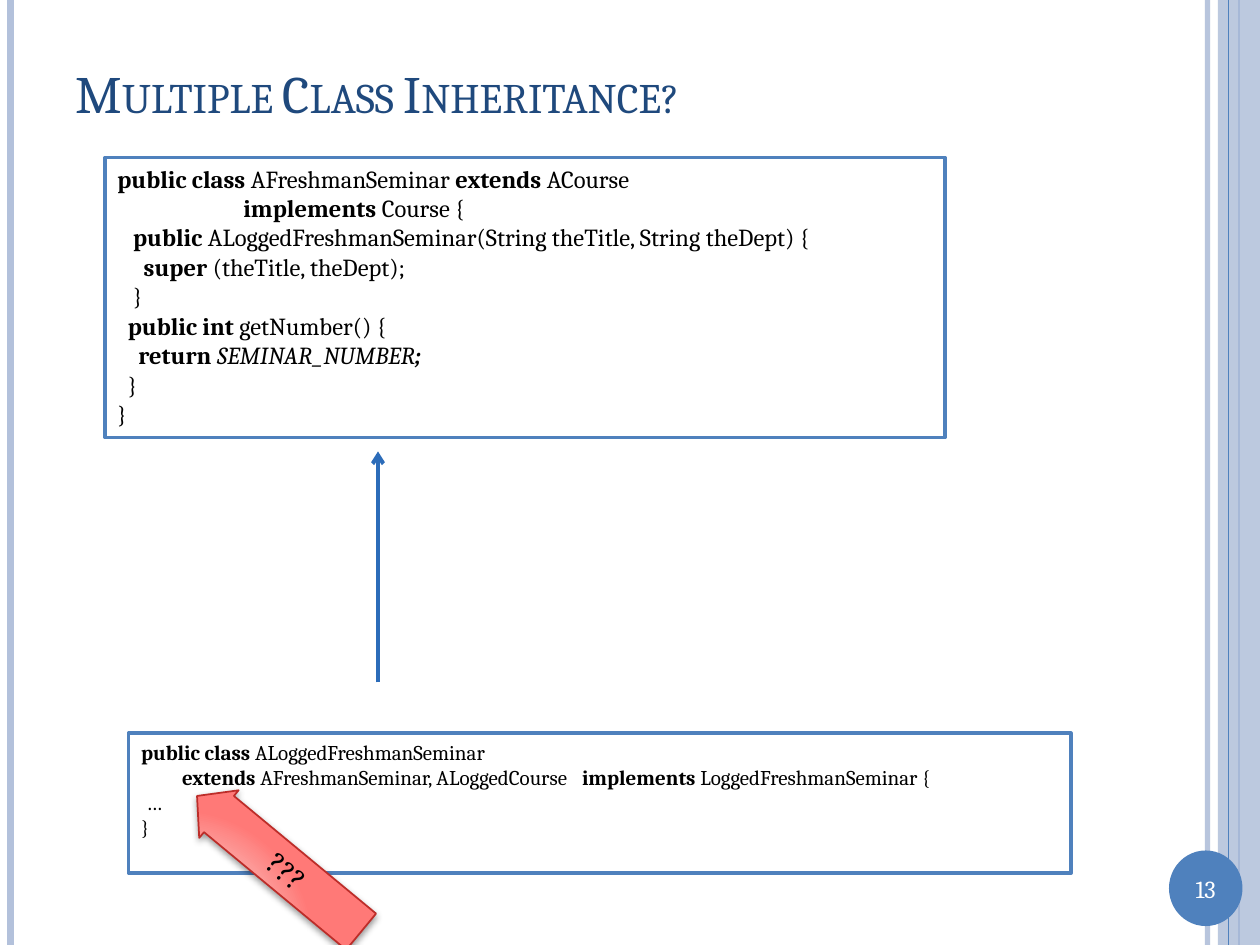
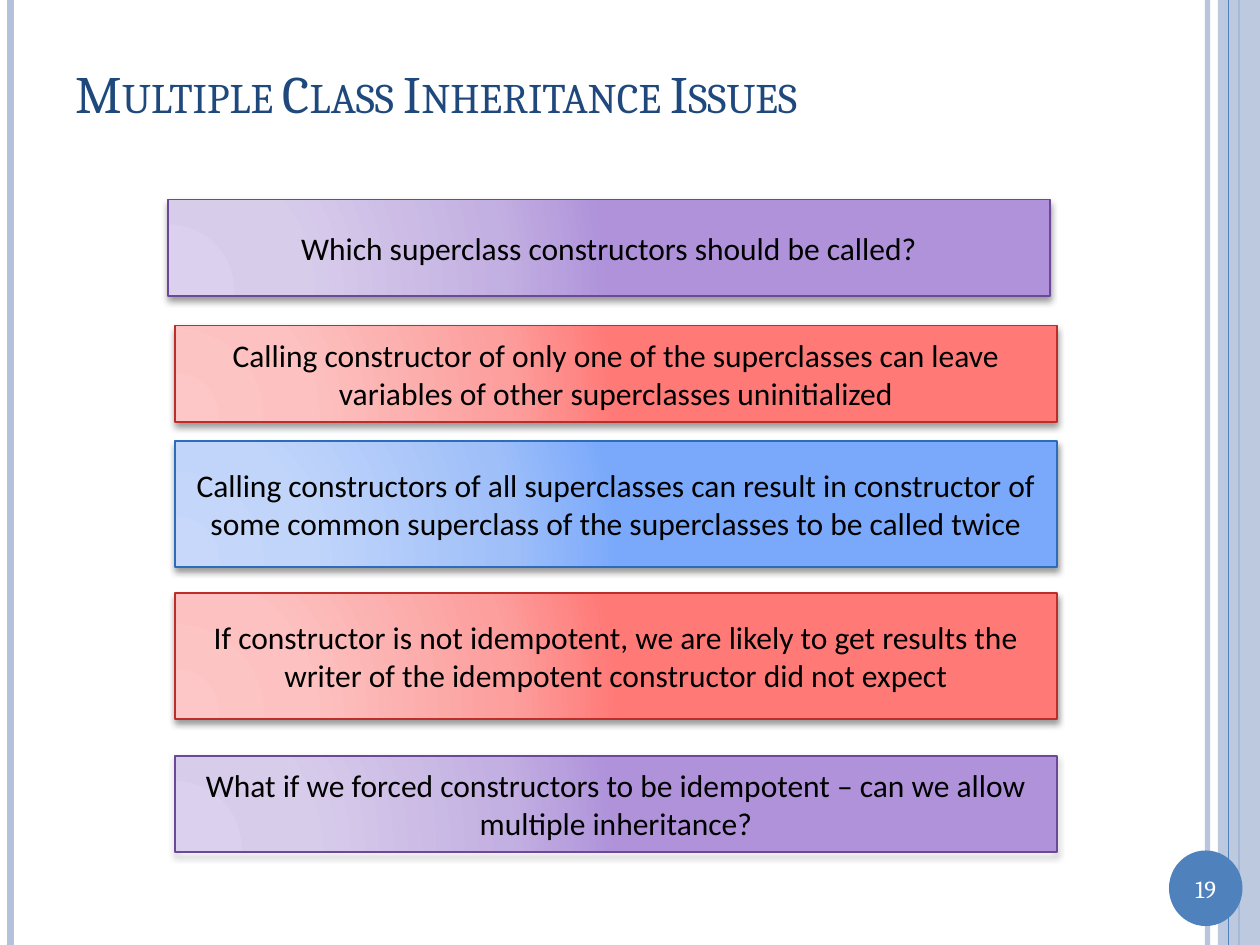
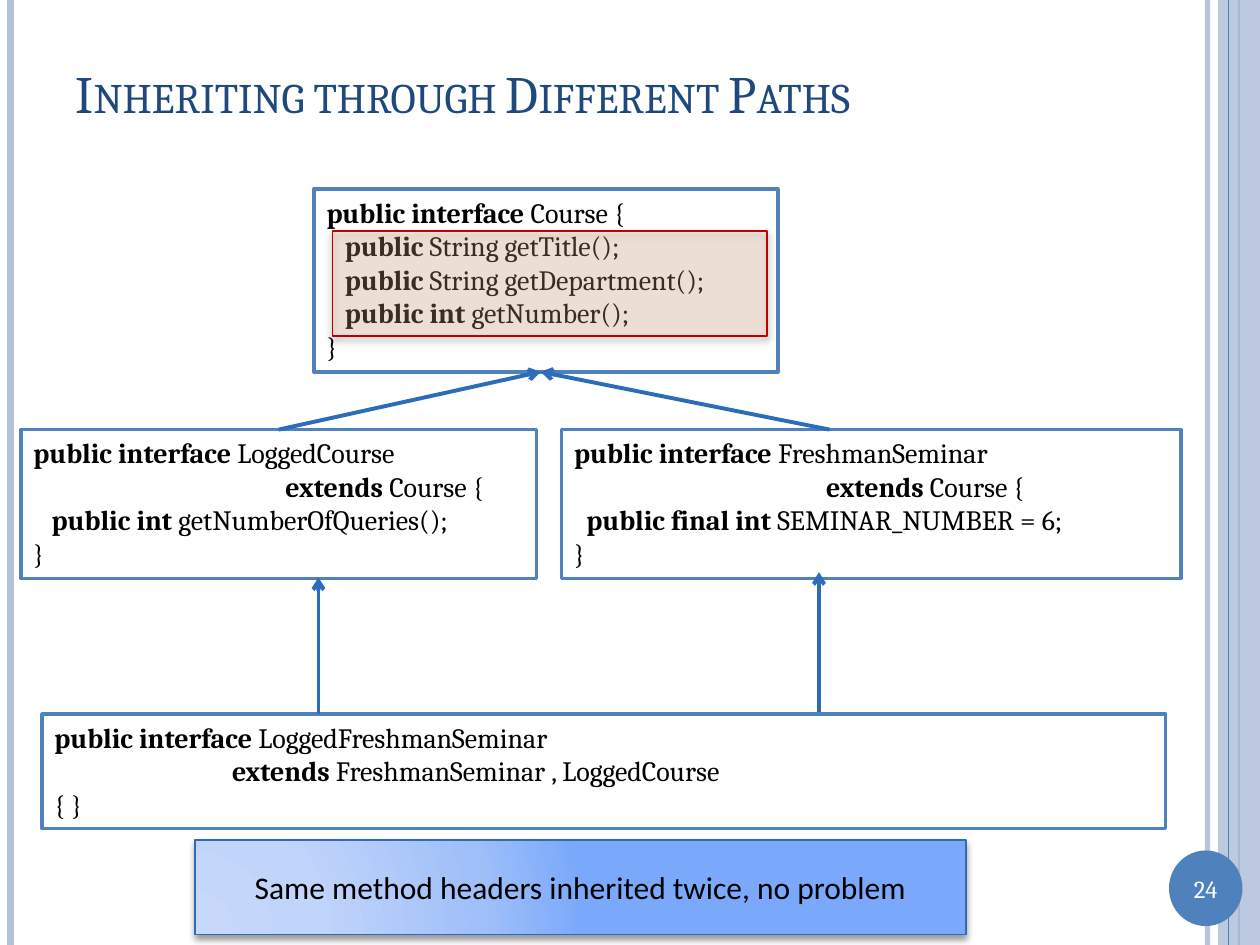
import dataclasses

import lxml.etree
import pptx
import pptx.dml.color
import pptx.enum.shapes
import pptx.enum.text
import pptx.oxml.ns
import pptx.util

Pt = pptx.util.Pt
qn = pptx.oxml.ns.qn
SHAPES = pptx.enum.shapes.MSO_SHAPE
MIDDLE = pptx.enum.text.MSO_ANCHOR.MIDDLE
ALIGN = pptx.enum.text.PP_ALIGN


@dataclasses.dataclass(frozen=True)
class Tone:
    line: str
    stops: tuple


@dataclasses.dataclass(frozen=True)
class Theme:
    serif: str = "Cambria"
    sans: str = "Calibri"
    title: str = "1F497D"
    accent: str = "4F81BD"
    band: str = "B3C1DB"
    arrow: str = "2C6CB9"
    text: str = "000000"
    paper: str = "FFFFFF"
    marker: str = "FAC090"
    marker_line: str = "C00000"
    title_size: int = 30
    panel_size: int = 18
    number_size: int = 14
    code_small: int = 12
    code_medium: int = 14
    code_large: int = 16
    purple: Tone = Tone("6C4898", ("DBD0ED", "D8CCEB", "C3B0E2", "AF92DA"))
    red: Tone = Tone("BD2D29", ("FCC7C6", "FCC1C0", "FC9F9D", "FF7977"))
    blue: Tone = Tone("2C6CB9", ("C7D8FB", "C1D5FA", "9FBFF9", "7AA9FB"))


@dataclasses.dataclass(frozen=True)
class Box:
    left: float
    top: float
    width: float
    height: float

    def inner(self, left, top, width, height):
        return Box(self.left + left, self.top + top, width, height)

    def point(self, x, y):
        return self.left + x, self.top + y

    def lengths(self):
        return [Pt(value) for value in dataclasses.astuple(self)]


THEME = Theme()
PAGE = Box(0, 0, 720, 540)


def rgb(colour):
    return pptx.dml.color.RGBColor.from_string(colour)


def add_element(parent, tag, **attributes):
    element = lxml.etree.SubElement(parent, qn(tag))
    for name, value in attributes.items():
        element.set(name, str(value))
    return element


def set_opacity(fill_owner, percent):
    colour = next(fill_owner.iter(qn("a:srgbClr")))
    add_element(colour, "a:alpha", val=percent * 1000)


def set_font(span, name, size, colour=THEME.text):
    span.font.name = name
    span.font.size = Pt(size)
    span.font.color.rgb = rgb(colour)


def add_box(page, box, fill=None, line=None, weight=1, kind=SHAPES.RECTANGLE):
    shape = page.shapes.add_shape(kind, *box.lengths())
    shape.shadow.inherit = False
    if fill:
        shape.fill.solid()
        shape.fill.fore_color.rgb = rgb(fill)
    if line:
        shape.line.color.rgb = rgb(line)
        shape.line.width = Pt(weight)
    else:
        shape.line.fill.background()
    return shape


def add_line(page, start, end, colour=THEME.arrow, weight=2.25, arrow=True):
    points = [Pt(value) for value in (*start, *end)]
    line = page.shapes.add_connector(pptx.enum.shapes.MSO_CONNECTOR.STRAIGHT, *points)
    line.line.color.rgb = rgb(colour)
    line.line.width = Pt(weight)
    properties = line._element.spPr
    if arrow:
        add_element(properties.find(qn("a:ln")), "a:tailEnd", type="arrow")
    add_element(properties, "a:effectLst")
    return line


def add_shadow(shape):
    effects = shape._element.spPr.find(qn("a:effectLst"))
    shadow = add_element(effects, "a:outerShdw", blurRad=Pt(4), dist=Pt(2),
                         dir=90 * 60000, rotWithShape=0)
    colour = add_element(shadow, "a:srgbClr", val=THEME.text)
    add_element(colour, "a:alpha", val=40000)


def add_gradient(shape, tone):
    shape.fill.gradient()
    gradient = shape._element.spPr.find(qn("a:gradFill"))
    for child in list(gradient):
        gradient.remove(child)
    stops = add_element(gradient, "a:gsLst")
    for position, colour in zip((0, 30, 75, 100), tone.stops):
        stop = add_element(stops, "a:gs", pos=position * 1000)
        add_element(stop, "a:srgbClr", val=colour)
    circle = add_element(gradient, "a:path", path="circle")
    add_element(circle, "a:fillToRect", l=5000, t=100000, r=120000, b=10000)


def set_label(shape, text, font, size, colour=THEME.text, inset=3.6):
    frame = shape.text_frame
    frame.word_wrap = True
    frame.vertical_anchor = MIDDLE
    frame.margin_left = frame.margin_right = Pt(inset)
    frame.margin_top = frame.margin_bottom = Pt(inset)
    frame.text = text
    para = frame.paragraphs[0]
    para.alignment = ALIGN.CENTER
    set_font(para.runs[0], font, size, colour)


def add_panel(page, box, text, tone, kind=SHAPES.RECTANGLE, font=THEME.sans):
    panel = add_box(page, box, line=tone.line, kind=kind)
    add_gradient(panel, tone)
    add_shadow(panel)
    set_label(panel, text, font, THEME.panel_size)
    return panel


def add_code(page, box, size, lines):
    shape = add_box(page, box, THEME.paper, THEME.accent, 2)
    frame = shape.text_frame
    frame.word_wrap = True
    frame.vertical_anchor = pptx.enum.text.MSO_ANCHOR.TOP
    for index, (indent, line) in enumerate(lines):
        para = frame.add_paragraph() if index else frame.paragraphs[0]
        para.alignment = ALIGN.LEFT
        properties = para._p.get_or_add_pPr()
        properties.set("marL", "0")
        properties.set("indent", str(Pt(indent)))
        if "\t" in line:
            tabs = add_element(properties, "a:tabLst")
            add_element(tabs, "a:tab", pos=Pt(252), algn="l")
        for bold, section in enumerate(line.split("*")):
            for italic, piece in enumerate(section.split("~")):
                if piece:
                    span = para.add_run()
                    span.text = piece
                    set_font(span, THEME.serif, size)
                    span.font.bold = bold % 2 == 1
                    span.font.italic = italic % 2 == 1
    return shape


def add_frame(page, area, number):
    def rule(offset, colour, weight):
        return add_line(page, area.point(offset, 0), area.point(offset, area.height),
                        colour, weight, arrow=False)

    set_opacity(rule(690, THEME.band, 3)._element.spPr, 93)
    rule(6, THEME.band, 4.5)
    rule(708, THEME.accent, 1.5)
    band = add_box(page, area.inner(696, 0, 24, area.height), THEME.band)
    set_opacity(band._element.spPr, 87)
    rule(702, THEME.accent, 0.75)
    badge = add_box(page, area.inner(668, 486, 42, 43.2), THEME.accent, kind=SHAPES.OVAL)
    set_label(badge, str(number), THEME.serif, THEME.number_size, THEME.paper, 0)


def set_title(page, box, text):
    title = page.shapes.title
    title.left, title.top, title.width, title.height = box.lengths()
    frame = title.text_frame
    frame.text = text
    frame.word_wrap = True
    frame.vertical_anchor = MIDDLE
    para = frame.paragraphs[0]
    para.alignment = ALIGN.LEFT
    span = para.runs[0]
    set_font(span, THEME.serif, THEME.title_size, THEME.title)
    span._r.get_or_add_rPr().set("cap", "small")


def add_page(deck, area, title, number):
    page = deck.slides.add_slide(deck.slide_layouts[5])
    add_frame(page, area, number)
    set_title(page, area.inner(36, 21.5, 624, 62.5), title)
    return page


def add_question_arrow(page, box):
    arrow = add_panel(page, box, "???", THEME.red, SHAPES.RIGHT_ARROW, THEME.serif)
    arrow.adjustments[0] = 0.76
    arrow.adjustments[1] = 0.46
    arrow.rotation = 39.6
    arrow._element.spPr.find(qn("a:xfrm")).set("flipH", "1")


def build_class_page(deck, area):
    page = add_page(deck, area, "Multiple Class Inheritance?", 13)
    add_code(page, area.inner(73.5, 419, 538.5, 80), THEME.code_small, [
        (0, "*public class *ALoggedFreshmanSeminar"),
        (23.5, "*extends *AFreshmanSeminar, ALoggedCourse\t*implements *LoggedFreshmanSeminar {"),
        (3, "…"),
        (0, "}"),
    ])
    add_line(page, area.point(216, 390), area.point(216, 258))
    add_code(page, area.inner(60, 90, 480, 160), THEME.code_medium, [
        (0, "*public class *AFreshmanSeminar *extends *ACourse"),
        (72, "*implements *Course {"),
        (9, "*public *ALoggedFreshmanSeminar(String theTitle, String theDept) {"),
        (15, "*super *(theTitle, theDept);"),
        (9, "}"),
        (6, "*public int *getNumber() {"),
        (12, "*return *~SEMINAR_NUMBER~*~;~*"),
        (6, "}"),
        (0, "}"),
    ])
    add_question_arrow(page, area.inner(98.64, 476, 121.7, 35.3))


def build_issues_page(deck, area):
    page = add_page(deck, area, "Multiple Class Inheritance Issues", 19)
    panels = [
        (96, 114, 55, THEME.purple, "Which superclass constructors should be called?"),
        (100, 186, 55, THEME.red, "Calling constructor of only one of the superclasses "
         "can leave variables of other superclasses uninitialized"),
        (100, 252, 72, THEME.blue, "Calling constructors of all superclasses can result in "
         "constructor of some common superclass of the superclasses to be called twice"),
        (100, 339, 72, THEME.red, "If constructor is not idempotent, we are likely to get "
         "results the writer of the idempotent constructor did not expect"),
        (100, 432, 55, THEME.purple, "What if we forced constructors to be idempotent – "
         "can we allow multiple inheritance?"),
    ]
    for left, top, height, tone, text in panels:
        add_panel(page, area.inner(left, top, 504, height), text, tone)


def build_paths_page(deck, area):
    page = add_page(deck, area, "Inheriting through Different Paths", 24)
    course_box = area.inner(179.5, 108, 265, 104.5)
    add_code(page, course_box, THEME.code_large, [
        (0, "*public interface* Course {"),
        (10.5, "*public *String getTitle();"),
        (10.5, "*public *String getDepartment();"),
        (10.5, "*public int *getNumber();"),
        (0, "}"),
    ])
    add_code(page, area.inner(321, 245.5, 354, 85), THEME.code_large, [
        (0, "*public interface *FreshmanSeminar"),
        (144, "*extends *Course {"),
        (7, "*public final int* SEMINAR_NUMBER = 6;"),
        (0, "}"),
    ])
    logged_course = add_code(page, area.inner(12, 245.5, 294.5, 85), THEME.code_large, [
        (0, "*public interface *LoggedCourse"),
        (144, "*extends *Course {"),
        (10.5, "*public int *getNumberOfQueries();"),
        (0, "}"),
    ])
    course_foot = area.point(309, 212.5)
    add_line(page, area.point(474, 245.5), course_foot)
    logged_link = add_line(page, area.point(159, 245.5), course_foot)
    logged_link.begin_connect(logged_course, 0)
    add_line(page, area.point(468, 408), area.point(468, 327))
    add_code(page, area.inner(24, 408, 642, 65.5), THEME.code_large, [
        (0, "*public interface *LoggedFreshmanSeminar"),
        (101.5, "*extends *FreshmanSeminar , LoggedCourse"),
        (0, "{ }"),
    ])
    add_line(page, area.point(182, 408), area.point(182, 330))
    marker = add_box(page, course_box.inner(10.5, 24, 248.5, 60),
                     THEME.marker, THEME.marker_line)
    set_opacity(marker._element.spPr, 23)
    add_shadow(marker)
    add_panel(page, area.inner(111.5, 480, 440.5, 54),
              "Same method headers inherited twice, no problem", THEME.blue)


def main():
    deck = pptx.Presentation()
    deck.slide_width = Pt(PAGE.width)
    deck.slide_height = Pt(PAGE.height)
    for build in (build_class_page, build_issues_page, build_paths_page):
        build(deck, PAGE)
    deck.save("out.pptx")


if __name__ == "__main__":
    main()
